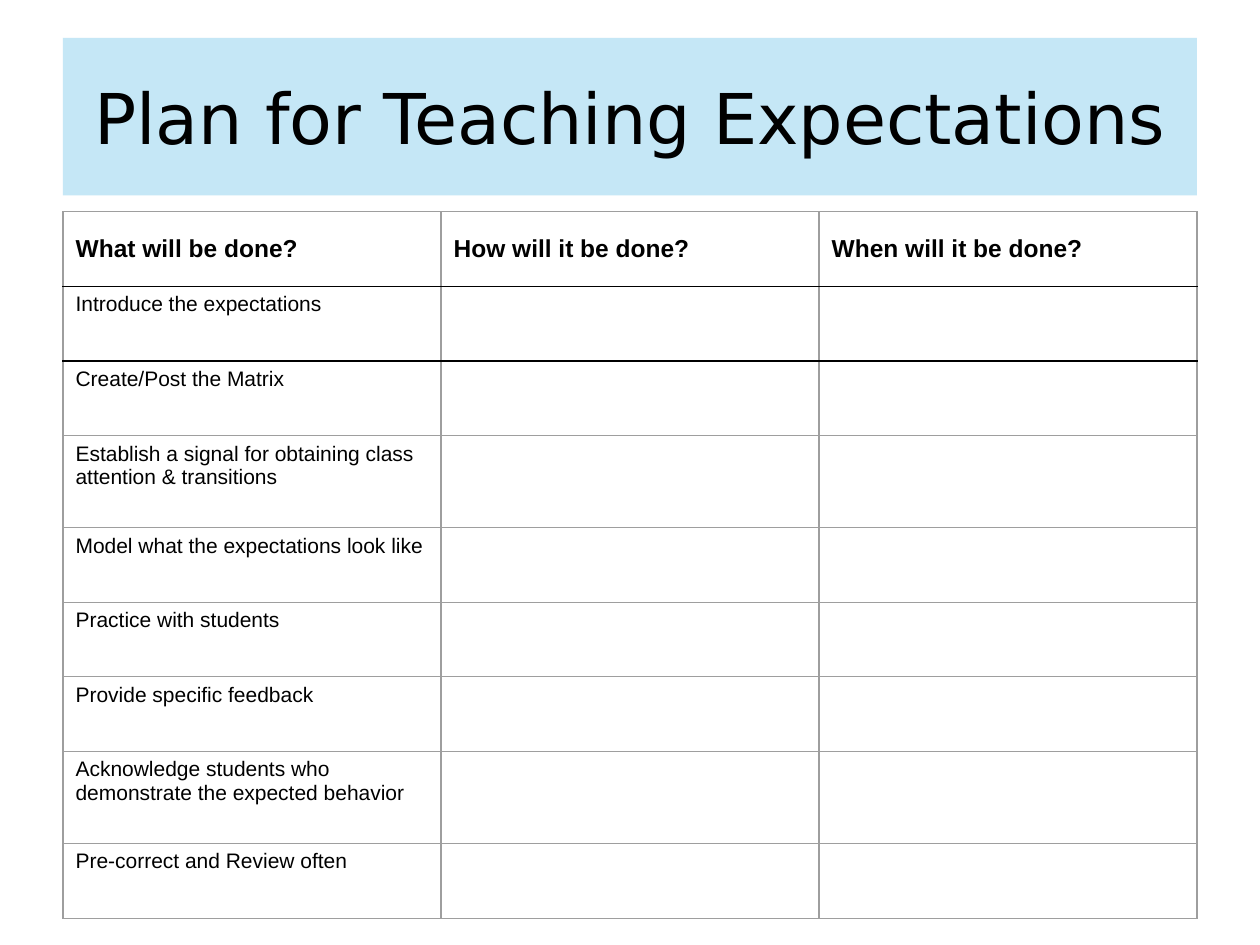
import pptx
import pptx.dml.color
import pptx.enum.shapes
import pptx.enum.text
import pptx.oxml.ns
import pptx.util
from lxml import etree

RGBColor = pptx.dml.color.RGBColor
Anchor = pptx.enum.text.MSO_ANCHOR
Align = pptx.enum.text.PP_ALIGN

BLACK = RGBColor(0x00, 0x00, 0x00)
GREY = RGBColor(0x9E, 0x9E, 0x9E)
SKY = RGBColor(0xA9, 0xDC, 0xF2)

SLIDE_WIDTH = pptx.util.Inches(10)
SLIDE_HEIGHT = pptx.util.Inches(7.5)
MARGIN = int(SLIDE_WIDTH * 0.05)
CONTENT_WIDTH = SLIDE_WIDTH - 2 * MARGIN
TABLE_HEIGHT = pptx.util.Inches(5.61)
TALL_ROW = pptx.util.Inches(0.73)

HEADERS = ["What will be done?", "How will it be done?", "When will it be done?"]
STEPS = [
    "Introduce the expectations",
    "Create/Post the Matrix",
    "Establish a signal for obtaining class attention & transitions",
    "Model what the expectations look like",
    "Practice with students",
    "Provide specific feedback",
    "Acknowledge students who demonstrate the expected behavior",
    "Pre-correct and Review often",
]
TALL_ROWS = {3, 7}
BLACK_RULES = {1, 2}


def write_text(frame, text, size, font="Arial", bold=False, align=Align.LEFT):
    paragraph = frame.paragraphs[0]
    paragraph.alignment = align
    run = paragraph.add_run()
    run.text = text
    run.font.name = font
    run.font.size = pptx.util.Pt(size)
    run.font.bold = bold
    run.font.color.rgb = BLACK


def add_element(parent, tag, **attributes):
    return etree.SubElement(parent, pptx.oxml.ns.qn(tag), **attributes)


def add_border(cell, side, color, width):
    properties = cell._tc.get_or_add_tcPr()
    line = add_element(properties, f"a:ln{side}", w=str(pptx.util.Pt(width)))
    add_element(add_element(line, "a:solidFill"), "a:srgbClr", val=str(color))


def add_rule(cell, side, boundary):
    if boundary in BLACK_RULES:
        add_border(cell, side, BLACK, 1)
    else:
        add_border(cell, side, GREY, 0.75)


def add_title(slide, text):
    shape = slide.shapes.add_shape(
        pptx.enum.shapes.MSO_SHAPE.RECTANGLE,
        MARGIN, int(SLIDE_HEIGHT * 0.04), CONTENT_WIDTH, pptx.util.Inches(1.25),
    )
    shape.shadow.inherit = False
    shape.line.fill.background()
    shape.fill.solid()
    shape.fill.fore_color.rgb = SKY
    color = shape._element.spPr.find(".//" + pptx.oxml.ns.qn("a:srgbClr"))
    add_element(color, "a:alpha", val="67000")
    shape.text_frame.word_wrap = True
    shape.text_frame.vertical_anchor = Anchor.MIDDLE
    write_text(shape.text_frame, text, 40, font="DejaVu Sans", align=Align.CENTER)


def add_plan_table(slide):
    row_count = len(STEPS) + 1
    table = slide.shapes.add_table(
        row_count, len(HEADERS), MARGIN, pptx.util.Inches(1.68), CONTENT_WIDTH, TABLE_HEIGHT
    ).table
    table.first_row = False
    table.horz_banding = False
    short_row = (TABLE_HEIGHT - len(TALL_ROWS) * TALL_ROW) // (row_count - len(TALL_ROWS))
    rows = [HEADERS] + [[step, "", ""] for step in STEPS]
    for row_index, texts in enumerate(rows):
        header = row_index == 0
        table.rows[row_index].height = TALL_ROW if row_index in TALL_ROWS else short_row
        for column_index, text in enumerate(texts):
            cell = table.cell(row_index, column_index)
            cell.vertical_anchor = Anchor.MIDDLE if header else Anchor.TOP
            for side in "LR":
                add_border(cell, side, GREY, 0.75)
            add_rule(cell, "T", row_index)
            add_rule(cell, "B", row_index + 1)
            cell.fill.background()
            if text:
                write_text(cell.text_frame, text, 14 if header else 12, bold=header)


def main():
    presentation = pptx.Presentation()
    presentation.slide_width = SLIDE_WIDTH
    presentation.slide_height = SLIDE_HEIGHT
    slide = presentation.slides.add_slide(presentation.slide_layouts[6])
    add_title(slide, "Plan for Teaching Expectations")
    add_plan_table(slide)
    presentation.save("out.pptx")


if __name__ == "__main__":
    main()
